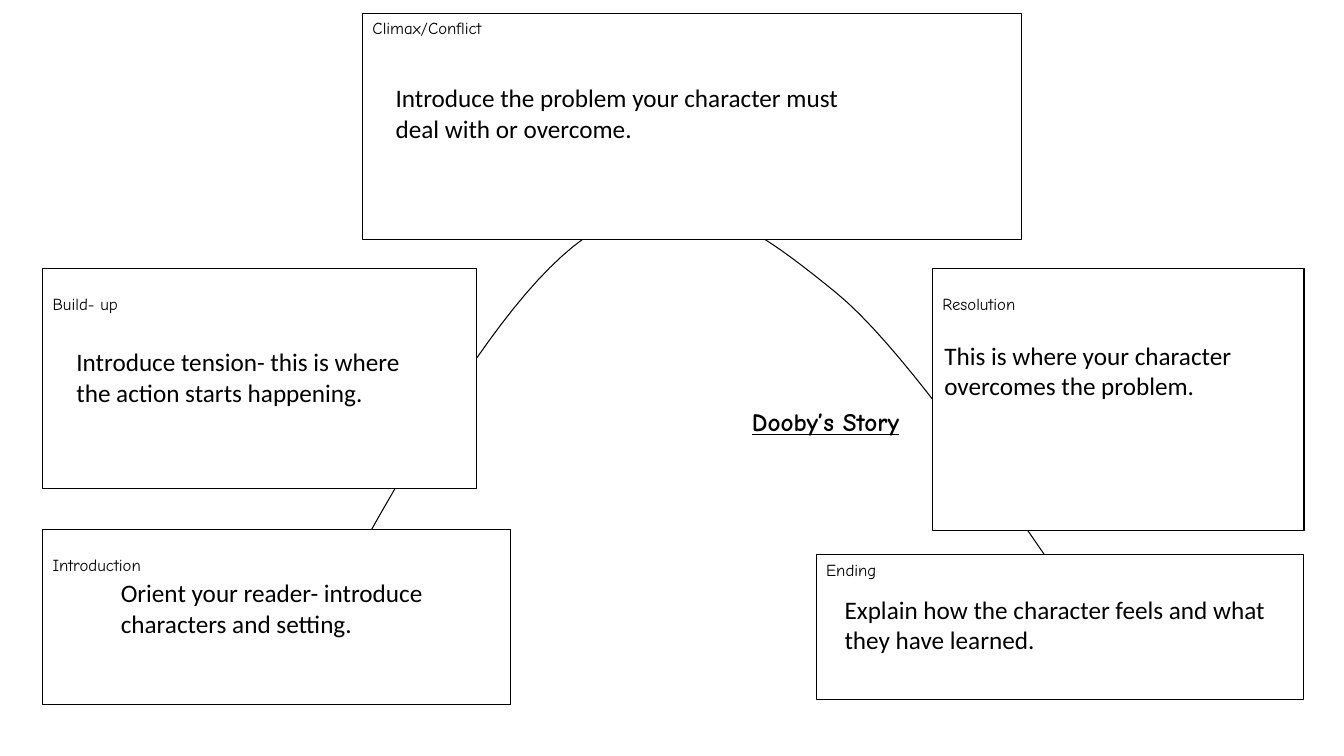
from dataclasses import dataclass

from pptx import Presentation
from pptx.dml.color import RGBColor
from pptx.enum.shapes import MSO_SHAPE
from pptx.enum.text import MSO_ANCHOR, PP_ALIGN
from pptx.util import Pt

RECT = MSO_SHAPE.RECTANGLE
TOP, MIDDLE = MSO_ANCHOR.TOP, MSO_ANCHOR.MIDDLE
LEFT = PP_ALIGN.LEFT


@dataclass(frozen=True)
class Theme:
    """Colours, fonts and sizes of the slide."""
    ink: RGBColor = RGBColor(0, 0, 0)
    paper: RGBColor = RGBColor(255, 255, 255)
    hand: str = "Comic Neue"
    body: str = "Calibri"
    small: float = 12
    large: float = 18
    line: float = 0.75


THEME = Theme()

STAGES = [
    ("Introduction", (30.5, 378, 334.5, 125.5), 18,
     "Orient your reader- introduce characters and setting.", (79.2, 409, 230.4, 51)),
    ("Build- up", (30.5, 191.5, 310, 157.5), 18,
     "Introduce tension- this is where the action starts happening.", (47.5, 244, 264.2, 51)),
    ("Resolution", (666, 192, 265.5, 187), 18,
     "This is where your character overcomes the problem.", (667.4, 239.5, 253.4, 51)),
    ("Ending", (583, 396, 348, 103.5), 3.6,
     "Explain how the character feels and what they have learned.", (596.2, 421, 319, 51)),
    ("Climax/Conflict", (259, 9.4, 471, 161.5), 3.6,
     "Introduce the problem your character must deal with or overcome.",
     (275.5, 55.5, 345.6, 51)),
]

ARC = [
    ((204.5, 488.9), (278.6, 352.8), (352.1, 216), (417.6, 169.9)),
    ((417.6, 169.9), (483.1, 123.1), (531.4, 155.5), (596.9, 208.8)),
    ((596.9, 208.8), (662.4, 262.1), (774.7, 442.1), (810, 488.9)),
]


def write(shape, text, font=THEME.body, size=THEME.large, bold=False,
          under=False, anchor=TOP, wrap=True, top=3.6):
    """Put formatted text into a shape."""
    frame = shape.text_frame
    frame.word_wrap = wrap
    frame.vertical_anchor = anchor
    frame.margin_top = Pt(top)
    para = frame.paragraphs[0]
    para.alignment = LEFT
    run = para.add_run()
    run.text = text
    style = run.font
    style.name, style.size = font, Pt(size)
    style.bold, style.underline = bold, under
    style.color.rgb = THEME.ink


def outline(shape):
    """Give a shape the thin dark line and no shadow."""
    shape.shadow.inherit = False
    shape.line.color.rgb = THEME.ink
    shape.line.width = Pt(THEME.line)


def add_box(slide, title, area, top):
    """Draw a white box with its heading."""
    box = slide.shapes.add_shape(RECT, *map(Pt, area))
    box.fill.solid()
    box.fill.fore_color.rgb = THEME.paper
    outline(box)
    write(box, title, font=THEME.hand, size=THEME.small, top=top)


def add_note(slide, text, area, **style):
    """Add a text box."""
    write(slide.shapes.add_textbox(*map(Pt, area)), text, **style)


def bezier(ends, t):
    """Return the point at t on a cubic curve."""
    u = 1 - t
    parts = (u ** 3, 3 * u * u * t, 3 * u * t * t, t ** 3)
    return tuple(Pt(sum(p * v for p, v in zip(parts, axis))) for axis in zip(*ends))


def add_arc(slide, curves, steps=24):
    """Draw joined cubic curves as one open line."""
    points = [bezier(ends, n / steps) for ends in curves for n in range(1, steps + 1)]
    pen = slide.shapes.build_freeform(*map(Pt, curves[0][0]))
    pen.add_line_segments(points, close=False)
    arc = pen.convert_to_shape()
    arc.fill.background()
    outline(arc)


def main():
    """Build and save the story mountain slide."""
    deck = Presentation()
    deck.slide_width, deck.slide_height = Pt(960), Pt(540)
    slide = deck.slides.add_slide(deck.slide_layouts[6])
    add_arc(slide, ARC)
    for title, area, top, text, place in STAGES:
        add_box(slide, title, area, top)
        add_note(slide, text, place)
    add_note(slide, "Dooby’s Story", (530, 283, 125, 36), font=THEME.hand,
             bold=True, under=True, anchor=MIDDLE, wrap=False)
    deck.save("out.pptx")


if __name__ == "__main__":
    main()
